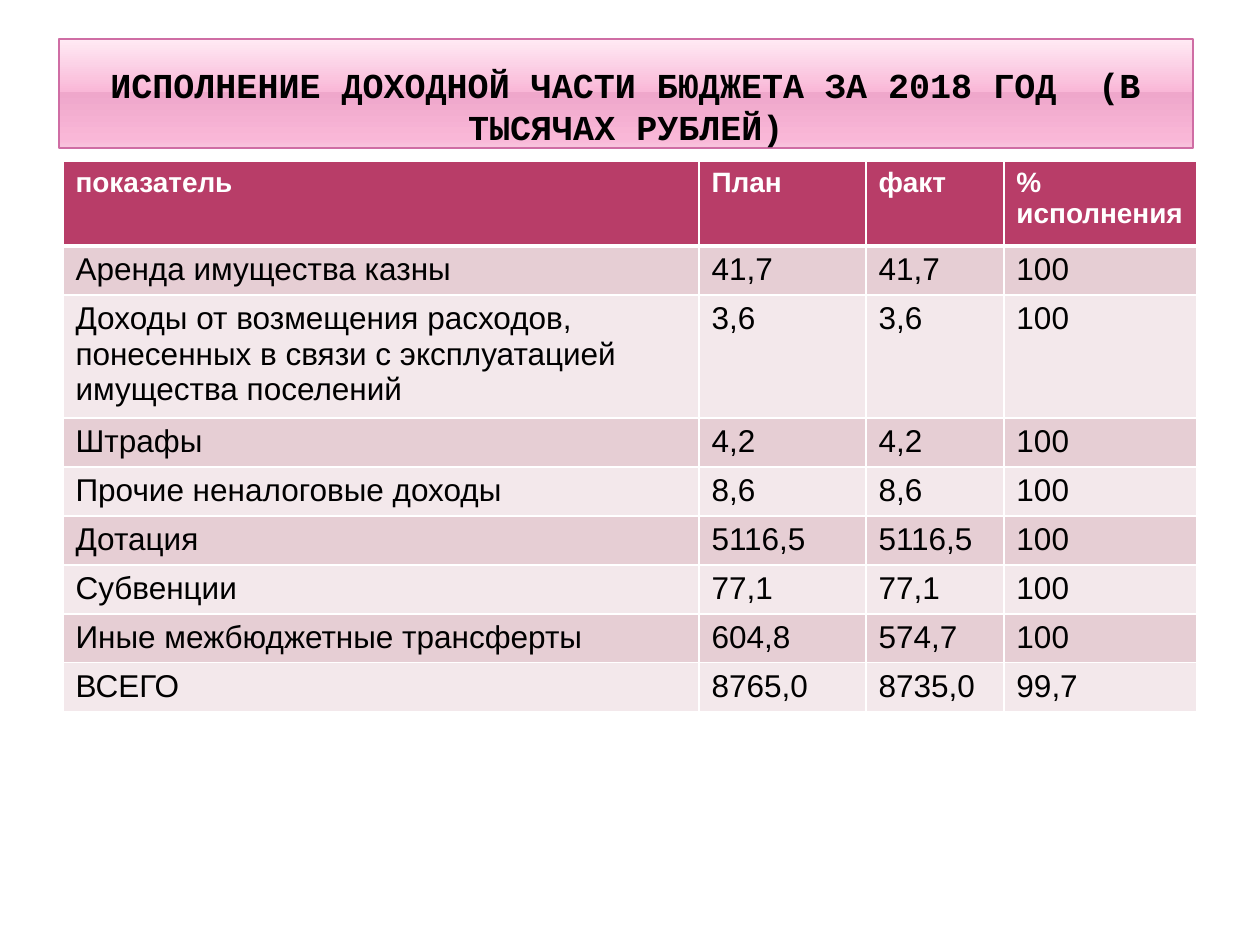
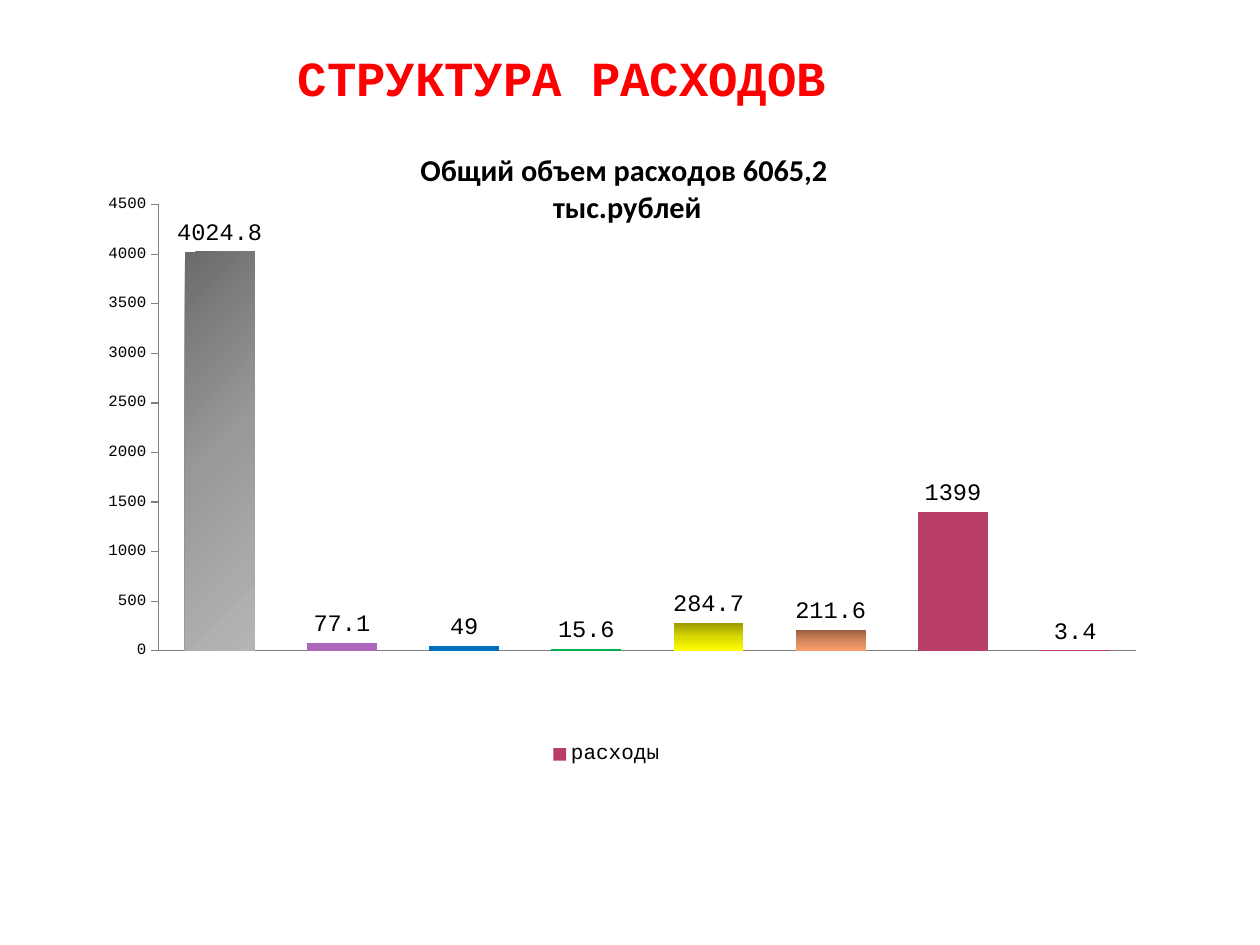
from lxml import etree
from pptx import Presentation
from pptx.chart.data import CategoryChartData
from pptx.dml.color import RGBColor
from pptx.enum import chart as ch, text as tx
from pptx.oxml import parse_xml
from pptx.oxml.ns import qn, nsdecls
from pptx.util import Pt

PX = 914400 / 126  # EMU in one px
WHITE = RGBColor(0xFF, 0xFF, 0xFF)
BLACK = RGBColor(0, 0, 0)
RED = RGBColor(0xFF, 0, 0)
ROSE = RGBColor(0xB8, 0x3D, 0x68)
EDGE = RGBColor(0xCF, 0x6D, 0xA4)
GREY = RGBColor(0x80, 0x80, 0x80)
BANDS = [RGBColor(0xE6, 0xCE, 0xD4), RGBColor(0xF3, 0xE8, 0xEB)]
MONO, SANS, HEAD = "Courier New", "Arial", "Calibri"

prs = Presentation()
prs.slide_width, prs.slide_height = round(1260 * PX), round(945 * PX)


def add_page(words, box, size, color):
    page = prs.slides.add_slide(prs.slide_layouts[5])
    title = page.shapes.title
    title.left, title.top, title.width, title.height = [round(v * PX) for v in box]
    frame = title.text_frame
    frame.text = words
    frame.word_wrap = True
    frame.auto_size = tx.MSO_AUTO_SIZE.NONE
    frame.vertical_anchor = tx.MSO_ANCHOR.BOTTOM
    frame.margin_left = frame.margin_right = round(6 * PX)
    frame.margin_top = frame.margin_bottom = 0
    para = frame.paragraphs[0]
    para.alignment = tx.PP_ALIGN.CENTER
    para.font.name, para.font.size, para.font.bold = MONO, Pt(size), True
    para.font.color.rgb = color
    return page


def shade(fill, angle, stops):
    fill.gradient()
    fill.gradient_angle = 360 - angle
    group = fill._xPr.find(".//" + qn("a:gsLst"))
    for old in list(group):
        group.remove(old)
    for pos, color in stops:
        stop = etree.SubElement(group, qn("a:gs"), pos=str(pos * 1000))
        etree.SubElement(stop, qn("a:srgbClr"), val=color)


# Slide 1: income title band
page = add_page("ИСПОЛНЕНИЕ ДОХОДНОЙ ЧАСТИ БЮДЖЕТА ЗА 2018 ГОД  (В ТЫСЯЧАХ РУБЛЕЙ)",
                (59, 39, 1134, 109), 20, BLACK)
band = page.shapes.title
shade(band.fill, 90, [(0, "FFEAF4"), (49, "F9B7D7"), (49, "EFA7CB"),
                      (92, "F9B7D7"), (100, "F8C4DD")])
band.line.color.rgb, band.line.width = EDGE, Pt(0.9)

# Income table
rows = [
    ("показатель", "План", "факт", "% исполнения"),
    ("Аренда имущества казны", "41,7", "41,7", "100"),
    ("Доходы от возмещения расходов, понесенных в связи с эксплуатацией "
     "имущества поселений", "3,6", "3,6", "100"),
    ("Штрафы", "4,2", "4,2", "100"),
    ("Прочие неналоговые доходы", "8,6", "8,6", "100"),
    ("Дотация", "5116,5", "5116,5", "100"),
    ("Субвенции", "77,1", "77,1", "100"),
    ("Иные межбюджетные трансферты", "604,8", "574,7", "100"),
    ("ВСЕГО", "8765,0", "8735,0", "99,7"),
]
wide = [636, 167, 138, 193]
high = [85, 49, 123] + [49] * 6
grid = page.shapes.add_table(len(rows), len(wide), *[
    round(v * PX) for v in (63, 161, sum(wide), sum(high))]).table
for col, w in zip(grid.columns, wide):
    col.width = round(w * PX)
for r, row in enumerate(rows):
    grid.rows[r].height = round(high[r] * PX)
    for c, words in enumerate(row):
        cell = grid.cell(r, c)
        cell.text = words
        cell.fill.solid()
        cell.fill.fore_color.rgb = BANDS[(r - 1) % 2] if r else ROSE
        font = cell.text_frame.paragraphs[0].font
        font.name, font.size, font.bold = SANS, Pt(18 if r else 16), r == 0
        font.color.rgb = BLACK if r else WHITE
        # White cell borders, thick under the header
        for i, side in enumerate(("lnL", "lnR", "lnT", "lnB")):
            thick = (r, side) in ((0, "lnB"), (1, "lnT"))
            cell._tc.get_or_add_tcPr().insert(i, parse_xml(
                f'<a:{side} {nsdecls("a")} w="{Pt(3 if thick else 1)}"><a:solidFill>'
                f'<a:srgbClr val="{WHITE}"/></a:solidFill></a:{side}>'))

# Slide 2: spending chart
page = add_page("СТРУКТУРА РАСХОДОВ", (63, 44, 998, 62), 28, RED)
data = CategoryChartData()
data.categories = [str(n) for n in range(1, 9)]
data.add_series("расходы", (4024.8, 77.1, 49, 15.6, 284.7, 211.6, 1399, 3.4))
chart = page.shapes.add_chart(ch.XL_CHART_TYPE.COLUMN_CLUSTERED, *[
    round(v * PX) for v in (35, 125, 1178, 745)], data).chart
chart.font.name, chart.font.size = MONO, Pt(17.3)
chart.font.color.rgb = BLACK

# Chart title
chart.has_title = True
frame = chart.chart_title.text_frame
frame.text = "Общий объем расходов 6065,2\n тыс.рублей"
for para in frame.paragraphs:
    para.font.name, para.font.size, para.font.bold = HEAD, Pt(17.3), True
    para.font.color.rgb = BLACK

# Axes
cat, val = chart.category_axis, chart.value_axis
cat.tick_label_position = ch.XL_TICK_LABEL_POSITION.NONE
cat.major_tick_mark = ch.XL_TICK_MARK.NONE
val.major_tick_mark = ch.XL_TICK_MARK.OUTSIDE
val.minimum_scale, val.maximum_scale, val.major_unit = 0, 4500, 500
val.tick_labels.font.size = Pt(9)
for axis in (cat, val):
    axis.has_major_gridlines = False
    axis.format.line.color.rgb = GREY

# Legend
chart.has_legend = True
chart.legend.position = ch.XL_LEGEND_POSITION.BOTTOM
chart.legend.include_in_layout = False
chart.legend.font.size = Pt(12)

# Columns and their labels
plot = chart.plots[0]
plot.gap_width = 75
plot.vary_by_categories = False
plot.has_data_labels = True
plot.data_labels.show_value = True
plot.data_labels.position = ch.XL_LABEL_POSITION.OUTSIDE_END
plot.data_labels.font.size = Pt(13.5)
bars = plot.series[0]
bars.invert_if_negative = False
bars.format.fill.solid()
bars.format.fill.fore_color.rgb = ROSE
for n, color in enumerate(("AC66BB", "0070C0", "00B050"), 1):
    fill = bars.points[n].format.fill
    fill.solid()
    fill.fore_color.rgb = RGBColor.from_string(color)
for n, angle, tones in ((0, 45, ("6B6B6B", "999999", "B5B5B5")),
                        (4, 90, ("979700", "D7D700", "FFFF00")),
                        (5, 90, ("965E40", "D5865C", "FC9F6D"))):
    shade(bars.points[n].format.fill, angle, zip((0, 50, 100), tones))

# Fixed places of the plot and the legend, as shares of the chart
area = chart._chartSpace.find(".//" + qn("c:plotArea"))
key = chart.legend._element
for part, inner, place in ((area, True, (0.105, 0.107, 0.83, 0.599)),
                           (key, False, (0.43, 0.82, 0.11, 0.05))):
    for old in part.findall(qn("c:layout")):
        part.remove(old)
    layout = etree.Element(qn("c:layout"))
    part.insert(0 if inner else 1, layout)
    manual = etree.SubElement(layout, qn("c:manualLayout"))
    if inner:
        etree.SubElement(manual, qn("c:layoutTarget"), val="inner")
    for tag in ("xMode", "yMode"):
        etree.SubElement(manual, qn("c:" + tag), val="edge")
    for tag, share in zip("xywh", place):
        etree.SubElement(manual, qn("c:" + tag), val=str(share))

prs.save("out.pptx")
